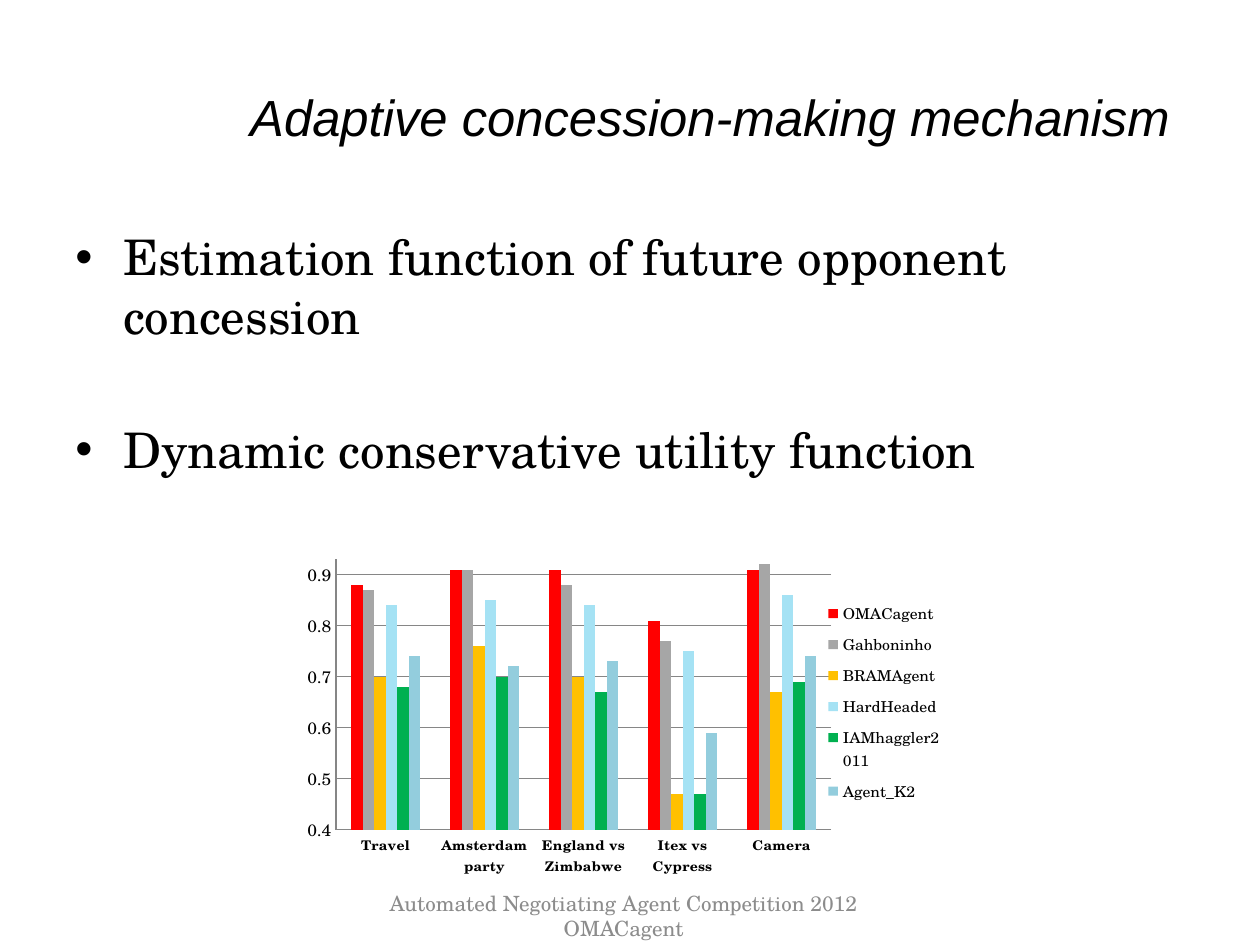
from dataclasses import dataclass

from lxml.etree import SubElement
from pptx import Presentation
from pptx.chart.data import CategoryChartData
from pptx.dml.color import RGBColor
from pptx.enum.chart import XL_CHART_TYPE, XL_LEGEND_POSITION, XL_TICK_MARK
from pptx.enum.text import MSO_ANCHOR, PP_ALIGN
from pptx.oxml.ns import qn
from pptx.util import Inches, Pt


@dataclass(frozen=True)
class Theme:
    """Colours, fonts and type sizes of the slide."""
    ink: str = "000000"
    muted: str = "8C8C8C"
    rule: str = "868686"
    head: str = "Arial"
    text: str = "TeX Gyre Schola"
    title: float = 29
    body: float = 28
    foot: float = 12
    axis: float = 10
    cats: float = 8
    legend: float = 9


THEME = Theme()
CATS = ["Travel", "Amsterdam party", "England vs Zimbabwe", "Itex vs Cypress", "Camera"]
AGENTS = [
    ("OMACagent", "FF0000", (0.88, 0.91, 0.91, 0.81, 0.91)),
    ("Gahboninho", "A6A6A6", (0.87, 0.91, 0.88, 0.77, 0.92)),
    ("BRAMAgent", "FFC000", (0.7, 0.76, 0.7, 0.47, 0.67)),
    ("HardHeaded", "A5E2F4", (0.84, 0.85, 0.84, 0.75, 0.86)),
    ("IAMhaggler2011", "00B050", (0.68, 0.7, 0.67, 0.47, 0.69)),
    ("Agent_K2", "93CDDD", (0.74, 0.72, 0.73, 0.59, 0.74)),
]


def style(font, size, color=THEME.ink, name=THEME.text):
    """Set the size, colour and face of a font."""
    font.size, font.name = Pt(size), name
    font.color.rgb = RGBColor.from_string(color)


def add_frame(slide, box, anchor):
    """Add a wrapping text box and return its frame."""
    frame = slide.shapes.add_textbox(*map(Inches, box)).text_frame
    frame.word_wrap, frame.vertical_anchor = True, anchor
    return frame


def add_lines(frame, lines):
    """Fill a frame with one paragraph a line and return them."""
    frame.text = "\n".join(lines)
    return frame.paragraphs


def add_title(slide, box):
    """Place the centred italic title."""
    frame = add_frame(slide, box, MSO_ANCHOR.MIDDLE)
    for para in add_lines(frame, ["Adaptive concession-making mechanism"]):
        para.alignment = PP_ALIGN.CENTER
        style(para.font, THEME.title, name=THEME.head)
        para.font.italic = True


def add_points(slide, box):
    """Place the bulleted points."""
    frame = add_frame(slide, box, MSO_ANCHOR.TOP)
    points = ["Estimation function of future opponent concession",
              "Dynamic conservative utility function"]
    for i, para in enumerate(add_lines(frame, points)):
        props = para._p.get_or_add_pPr()
        props.set("marL", str(Inches(0.38)))
        props.set("indent", str(-Inches(0.38)))
        SubElement(props, qn("a:buFont")).set("typeface", THEME.head)
        SubElement(props, qn("a:buChar")).set("char", "•")
        if i:
            para.space_before = Pt(43)
        style(para.font, THEME.body)


def add_footer(slide, box):
    """Place the two centred footer lines."""
    frame = add_frame(slide, box, MSO_ANCHOR.TOP)
    frame.margin_top = Inches(0.11)
    lines = ["Automated Negotiating Agent Competition 2012", "OMACagent"]
    for para in add_lines(frame, lines):
        para.alignment = PP_ALIGN.CENTER
        style(para.font, THEME.foot, THEME.muted)


def set_layout(node, box, inner=False):
    """Fix a chart part at fractions of the chart area."""
    for old in node.findall(qn("c:layout")):
        node.remove(old)
    layout = SubElement(node, qn("c:layout"))
    node.insert(int(node.find(qn("c:legendPos")) is not None), layout)
    manual = SubElement(layout, qn("c:manualLayout"))
    parts = [("xMode", "edge"), ("yMode", "edge"), *zip("xywh", box)]
    if inner:
        parts.insert(0, ("layoutTarget", "inner"))
    for tag, value in parts:
        SubElement(manual, qn(f"c:{tag}")).set("val", str(value))


def add_scores(slide, box):
    """Place the column chart of agent scores."""
    data = CategoryChartData()
    data.categories = CATS
    for name, _, values in AGENTS:
        data.add_series(name, values)
    chart = slide.shapes.add_chart(
        XL_CHART_TYPE.COLUMN_CLUSTERED, *map(Inches, box), data).chart
    chart.has_title = False
    style(chart.font, THEME.axis)
    plot = chart.plots[0]
    plot.gap_width, plot.overlap, plot.vary_by_categories = 261, 0, False
    for series, (_, color, _) in zip(plot.series, AGENTS):
        series.format.fill.solid()
        series.format.fill.fore_color.rgb = RGBColor.from_string(color)
    value = chart.value_axis
    value.minimum_scale, value.maximum_scale, value.major_unit = 0.4, 0.93, 0.1
    value.has_major_gridlines = True
    for axis in (chart.category_axis, value):
        axis.major_tick_mark = axis.minor_tick_mark = XL_TICK_MARK.NONE
    for part in (chart.category_axis, value, value.major_gridlines):
        part.format.line.color.rgb = RGBColor.from_string(THEME.rule)
        part.format.line.width = Pt(0.75)
    style(value.tick_labels.font, THEME.axis)
    style(chart.category_axis.tick_labels.font, THEME.cats)
    chart.category_axis.tick_labels.font.bold = True
    chart.has_legend = True
    chart.legend.position = XL_LEGEND_POSITION.RIGHT
    chart.legend.include_in_layout = False
    style(chart.legend.font, THEME.legend)
    root = chart.element
    set_layout(root.xpath("c:chart/c:plotArea")[0], (0.07, 0.04, 0.75, 0.86), True)
    set_layout(root.xpath("c:chart/c:legend")[0], (0.81, 0.15, 0.18, 0.69))


def main():
    """Build and save the slide."""
    deck = Presentation()
    deck.slide_width, deck.slide_height = Inches(10), Inches(7.5)
    slide = deck.slides.add_slide(deck.slide_layouts[6])
    add_title(slide, (1.78, 0.3, 7.72, 1.25))
    add_points(slide, (0.5, 1.75, 9, 4.95))
    add_footer(slide, (2.64, 6.96, 4.62, 0.4))
    add_scores(slide, (2.3, 4.34, 5.24, 2.62))
    deck.save("out.pptx")


if __name__ == "__main__":
    main()
